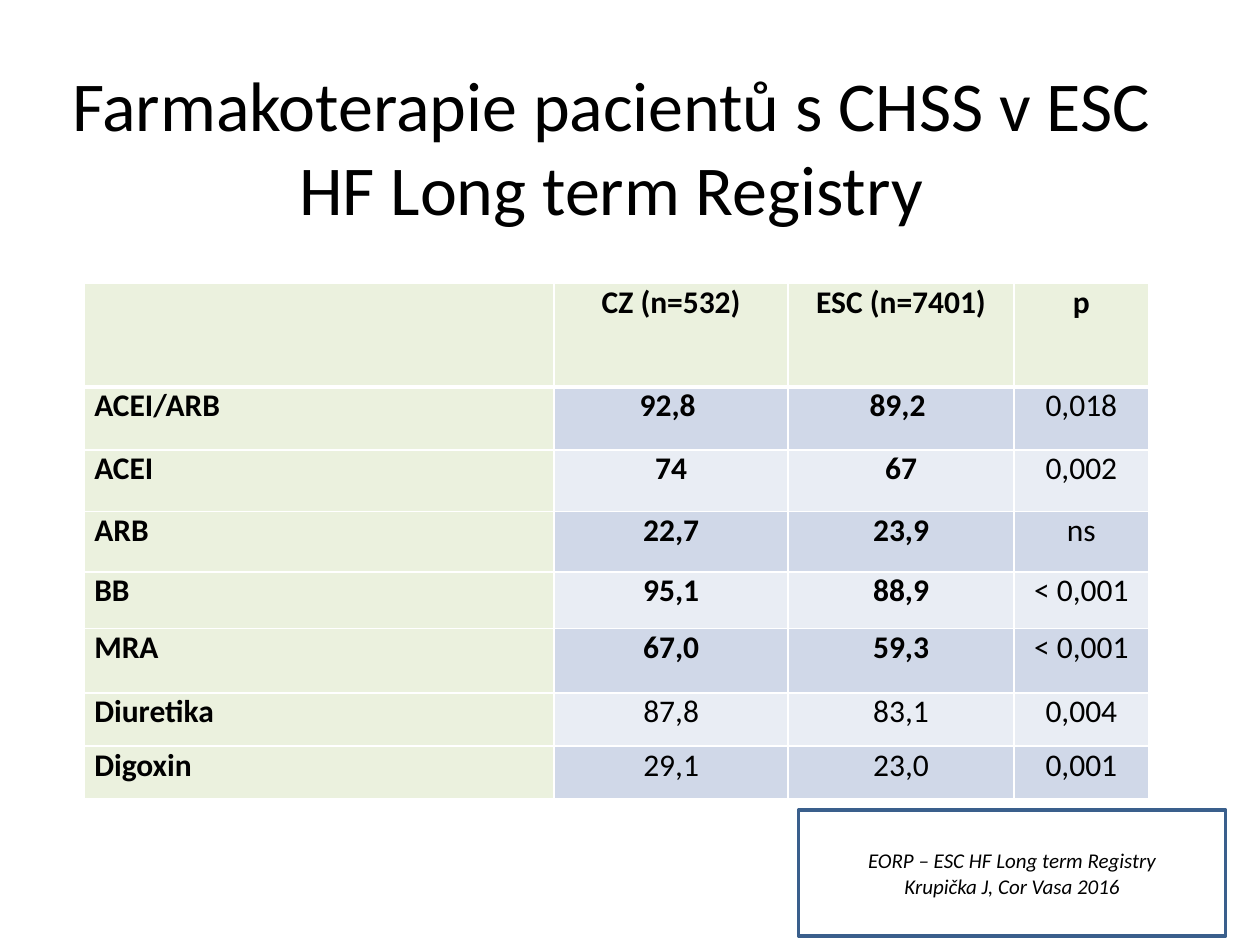
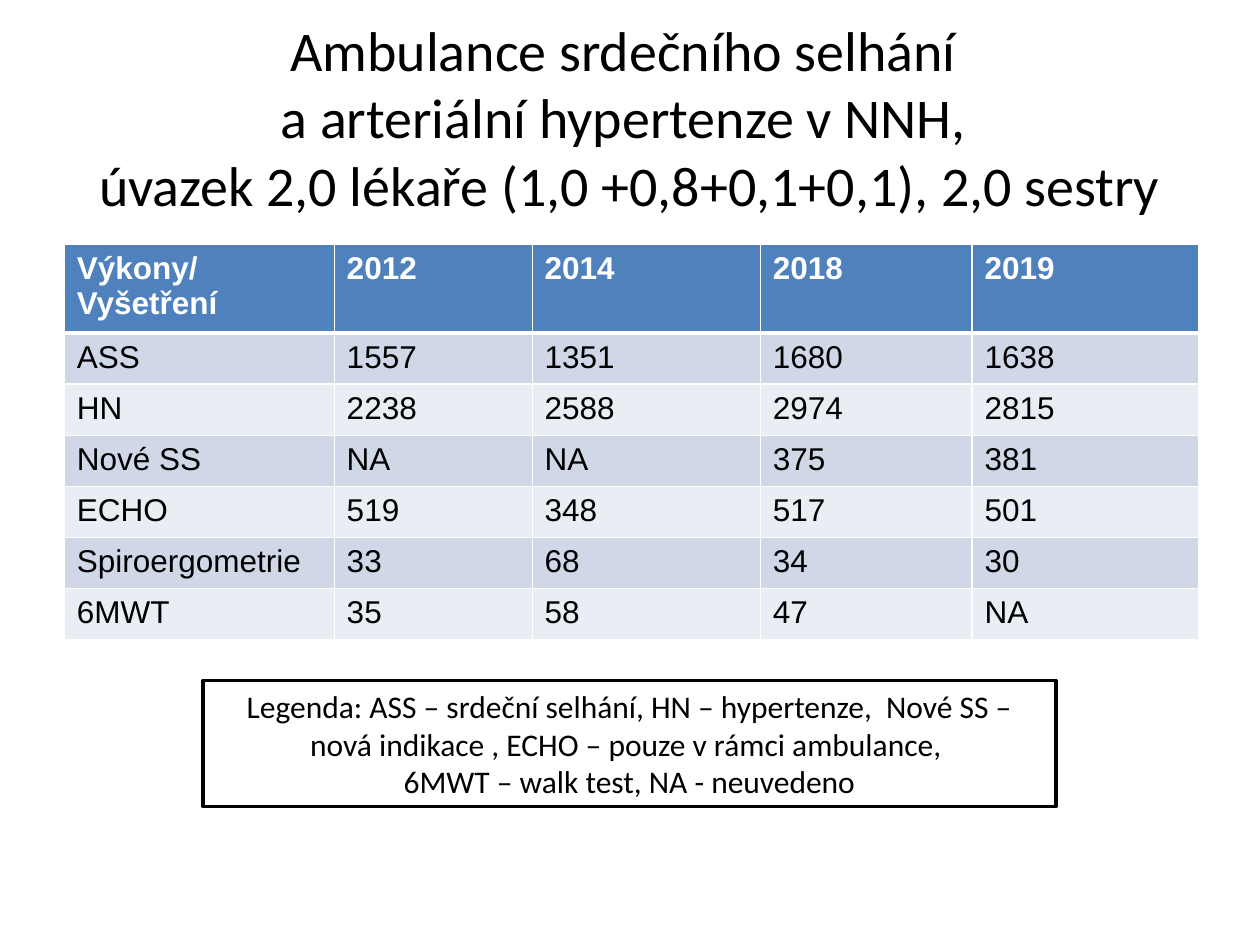
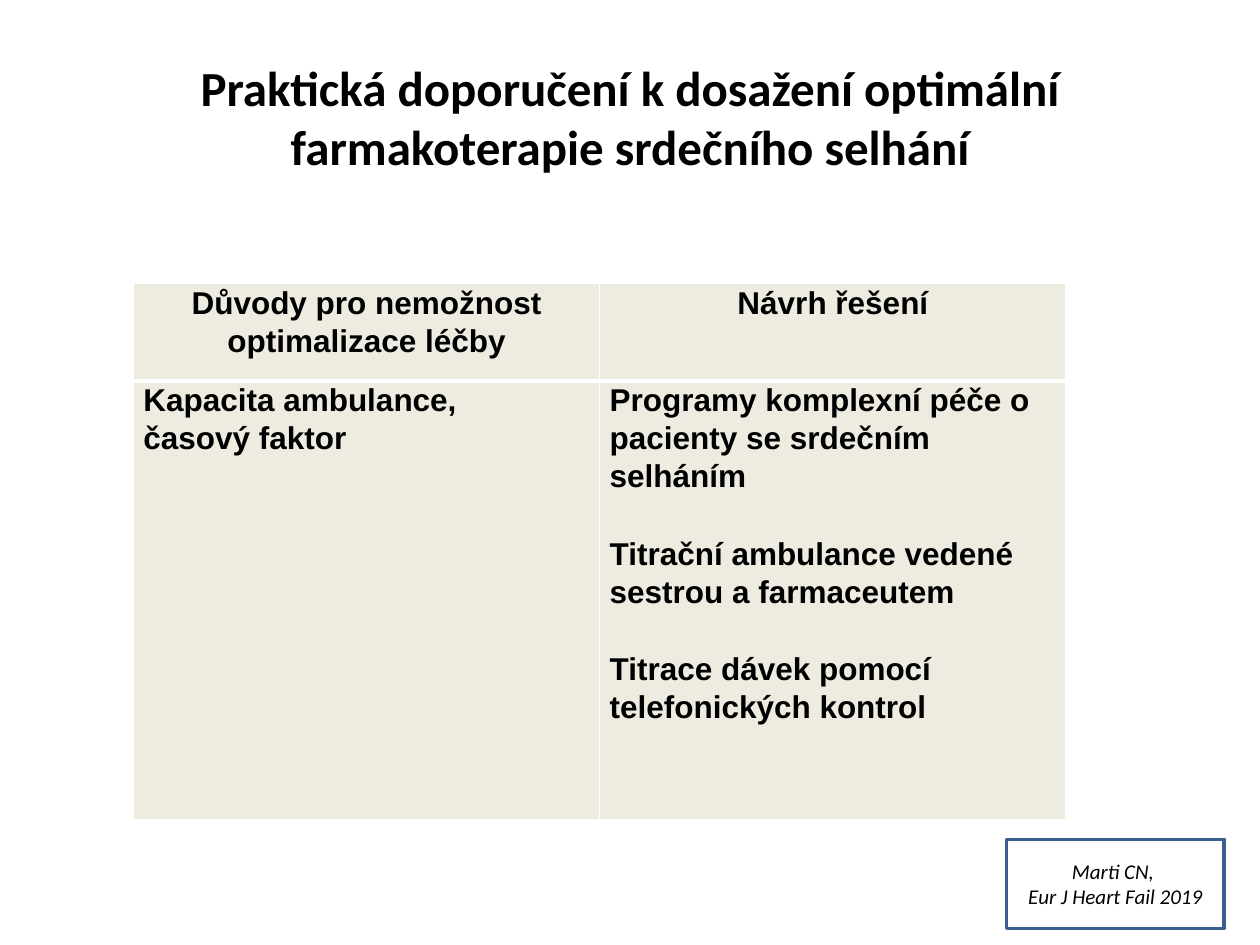
from lxml.etree import SubElement
from pptx import Presentation
from pptx.dml.color import RGBColor
from pptx.enum.shapes import MSO_SHAPE as Shape
from pptx.enum.text import MSO_ANCHOR as Anchor, PP_ALIGN as Align
from pptx.oxml.ns import qn
from pptx.util import Cm, Pt

# Shared look
COLORS = {
    "text": "000000", "paper": "FFFFFF", "frame": "3A5F8C",
    "header": "4F81BD", "band_dark": "D0D8E8", "band_light": "E9EDF4",
    "green": "EBF1DE", "beige": "EEECE1",
}
TABLE_SIZE = 18
TIGHT_MARGINS = (0.2, 0)
WIDE_MARGINS = (0.25, 0.13)
TITLE_AREA = (1.27, 0.76, 22.86, 3.18)

# Content: "\v" breaks a line, a list in a cell holds its paragraphs
SLIDES = [
    {
        "title": {
            "text": "Farmakoterapie pacientů s CHSS v ESC HF Long term Registry",
            "area": (0.89, 1.12, 22.86, 2.21), "size": 40, "anchor": Anchor.TOP,
        },
        "table": {
            "rows": [
                ["", "CZ (n=532)", "ESC (n=7401)", "p"],
                ["ACEI/ARB", "92,8 ", "89,2 ", "0,018"],
                ["ACEI", "74", "67", "0,002"],
                ["ARB", "22,7", "23,9", "ns"],
                ["BB", "95,1", "88,9", "< 0,001"],
                ["MRA", "67,0", "59,3", "< 0,001"],
                ["Diuretika", "87,8", "83,1", "0,004"],
                ["Digoxin", "29,1", "23,0", "0,001"],
            ],
            "corner": (1.7, 5.72),
            "widths": [9.47, 4.72, 4.55, 2.72],
            "heights": [2.08, 1.27, 1.24, 1.22, 1.14, 1.3, 1.07, 1.07],
            "font": "Calibri", "margins": TIGHT_MARGINS,
            "header_fill": "green", "label_fill": "green",
            "bands": ("band_dark", "band_light"),
            "bold": lambda row, column: 0 in (row, column) or (row <= 5 and column <= 2),
            "centered": lambda row, column: column > 0,
        },
        "note": {
            "lines": ["EORP – ESC HF Long term Registry", "Krupička J, Cor Vasa 2016"],
            "area": (16.1, 16.33, 8.61, 2.54),
        },
    },
    {
        "title": {
            "text": "Ambulance srdečního selhání \va arteriální hypertenze v NNH, \v"
                    "úvazek 2,0 lékaře (1,0 +0,8+0,1+0,1), 2,0 sestry",
            "size": 32,
        },
        "table": {
            "rows": [
                [["Výkony/", "Vyšetření"], "2012", "2014", "2018", "2019"],
                ["ASS", "1557", "1351", "1680", "1638"],
                ["HN", "2238", "2588", "2974", "2815"],
                ["Nové SS", "NA", "NA", "375", "381"],
                ["ECHO", "519", "348", "517", "501"],
                ["Spiroergometrie", "33", "68", "34", "30"],
                ["6MWT", "35", "58", "47", "NA"],
            ],
            "corner": (1.3, 4.93),
            "widths": [5.44, 3.99, 4.6, 4.27, 4.57],
            "heights": [1.65] + [1.03] * 6,
            "margins": WIDE_MARGINS,
            "header_fill": "header", "header_color": "paper",
            "bands": ("band_dark", "band_light"),
            "bold": lambda row, column: row == 0,
        },
        "note": {
            "lines": [
                "Legenda: ASS – srdeční selhání, HN – hypertenze,  Nové SS – nová indikace , "
                "ECHO – pouze v rámci ambulance, ",
                "6MWT – walk test, NA - neuvedeno",
            ],
            "area": (4.09, 13.72, 17.2, 2.54),
            "size": 18, "italic": False, "fill": "paper", "line": "text",
        },
    },
    {
        "title": {
            "text": "Praktická doporučení k dosažení optimální farmakoterapie srdečního selhání",
            "size": 28, "bold": True,
        },
        "table": {
            "rows": [
                ["Důvody pro nemožnost optimalizace léčby", "Návrh řešení"],
                [
                    ["Kapacita ambulance,", "časový faktor"],
                    [
                        "Programy komplexní péče o pacienty se srdečním selháním",
                        "Titrační ambulance vedené sestrou a farmaceutem",
                        "Titrace dávek pomocí telefonických kontrol",
                    ],
                ],
            ],
            "corner": (2.69, 5.72),
            "widths": [9.4, 9.4],
            "heights": [1.96, 8.84],
            "margins": TIGHT_MARGINS, "line_spacing": 1.07,
            "header_fill": "beige", "bands": ("beige",),
            "bold": lambda row, column: True,
            "centered": lambda row, column: row == 0,
            "gap": lambda row, column: 23 if column == 1 else 0,
        },
        "note": {
            "lines": ["Marti CN, ", "Eur J Heart Fail 2019"],
            "area": (20.29, 16.92, 4.39, 1.8),
        },
    },
]


def rgb(name):
    return RGBColor.from_string(COLORS[name])


def in_cm(values):
    return [Cm(value) for value in values]


def write(frame, lines, size, font="Calibri", color="text", bold=False, italic=False,
          align=Align.CENTER, gap=0, line_spacing=None):
    """Fill a text frame, one paragraph a line, with a gap between them."""
    frame.word_wrap = True
    for index, line in enumerate(lines):
        para = frame.paragraphs[0] if index == 0 else frame.add_paragraph()
        para.text = line
        para.alignment = align
        if line_spacing:
            para.line_spacing = line_spacing
        if gap and index:
            para.space_before = Pt(gap)
        para.font.name, para.font.size = font, Pt(size)
        para.font.bold, para.font.italic = bold, italic
        para.font.color.rgb = rgb(color)


def add_title(page, text, size, area=TITLE_AREA, anchor=Anchor.MIDDLE, bold=False):
    box = page.shapes.add_textbox(*in_cm(area))
    box.text_frame.vertical_anchor = anchor
    write(box.text_frame, [text], size, bold=bold)


def add_note(page, lines, area, size=12, italic=True, fill=None, line="frame"):
    box = page.shapes.add_shape(Shape.RECTANGLE, *in_cm(area))
    box.shadow.inherit = False
    if fill:
        box.fill.solid()
        box.fill.fore_color.rgb = rgb(fill)
    else:
        box.fill.background()
    box.line.color.rgb = rgb(line)
    box.line.width = Pt(2)
    box.text_frame.vertical_anchor = Anchor.MIDDLE
    write(box.text_frame, lines, size, italic=italic)


def set_borders(cell, row):
    """White rules, with a thick one under the header row."""
    thick = {0: "lnB", 1: "lnT"}.get(row)
    properties = cell._tc.get_or_add_tcPr()
    for index, side in enumerate(("lnL", "lnR", "lnT", "lnB")):
        border = properties.makeelement(qn(f"a:{side}"), {"w": str(Pt(3 if side == thick else 1))})
        SubElement(SubElement(border, qn("a:solidFill")), qn("a:srgbClr"), val=COLORS["paper"])
        properties.insert(index, border)


def add_table(page, rows, corner, widths, heights, margins, header_fill, bands, bold,
              font="Arial", header_color="text", label_fill=None, line_spacing=None,
              centered=lambda row, column: False, gap=lambda row, column: 0):
    area = (*corner, sum(widths), sum(heights))
    table = page.shapes.add_table(len(rows), len(widths), *in_cm(area)).table
    table.horz_banding = False
    for column, width in zip(table.columns, widths):
        column.width = Cm(width)
    for row, (values, height) in enumerate(zip(rows, heights)):
        table.rows[row].height = Cm(height)
        for column, value in enumerate(values):
            cell = table.cell(row, column)
            cell.margin_left = cell.margin_right = Cm(margins[0])
            cell.margin_top = cell.margin_bottom = Cm(margins[1])
            fill = header_fill if row == 0 else bands[(row - 1) % len(bands)]
            if label_fill and column == 0:
                fill = label_fill
            cell.fill.solid()
            cell.fill.fore_color.rgb = rgb(fill)
            set_borders(cell, row)
            write(cell.text_frame, value if isinstance(value, list) else [value],
                  TABLE_SIZE, font, header_color if row == 0 else "text",
                  bold(row, column),
                  align=Align.CENTER if centered(row, column) else Align.LEFT,
                  gap=gap(row, column), line_spacing=line_spacing)


def main():
    deck = Presentation()
    deck.slide_width, deck.slide_height = Cm(25.4), Cm(19.05)
    for content in SLIDES:
        page = deck.slides.add_slide(deck.slide_layouts[6])
        add_title(page, **content["title"])
        add_table(page, **content["table"])
        add_note(page, **content["note"])
    deck.save("out.pptx")


if __name__ == "__main__":
    main()
